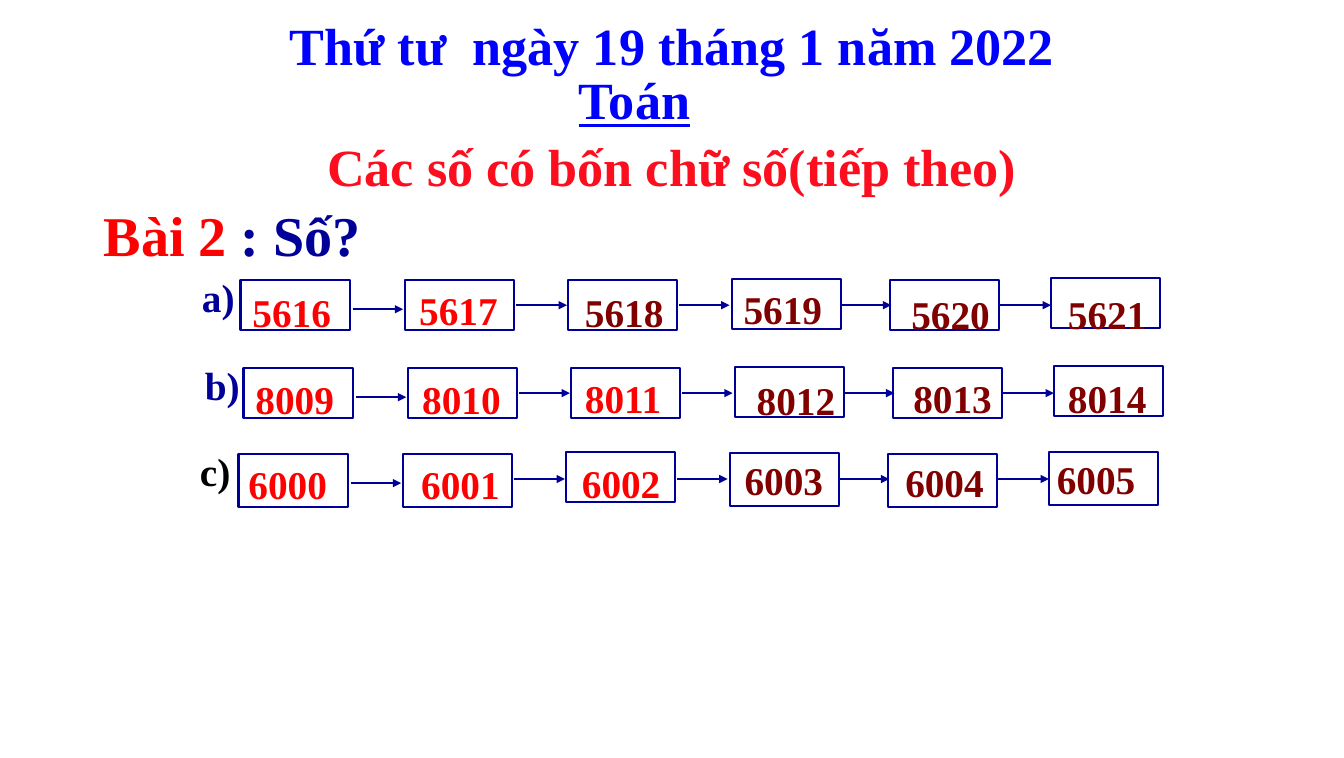
from pptx import Presentation
from pptx.dml.color import RGBColor
from pptx.enum.shapes import MSO_CONNECTOR, MSO_SHAPE
from pptx.enum.text import PP_ALIGN
from pptx.oxml.ns import qn
from pptx.util import Inches, Pt
from lxml.etree import SubElement

FONT = "Times New Roman"
COLORS = {
    "blue": "0000FF", "navy": "000099", "red": "FF0000", "rose": "FC0E1F",
    "maroon": "800000", "black": "000000", "white": "FFFFFF",
}
HEADS = [
    ("Thứ tư  ngày 19 tháng 1 năm 2022", 0.01, 13.3, "blue", False),
    ("Toán", 0.55, 12.56, "blue", True),
    ("Các số có bốn chữ số(tiếp theo)", 1.21, 13.3, "rose", False),
]
TASK = [("Bài 2 ", "red"), (": Số?", "navy")]
BOXES = [2.38, 4.01, 5.62, 7.24, 8.81, 10.4]
ARROWS = [3.49, 5.11, 6.72, 8.32, 9.9]
ROWS = [
    {"label": "a)", "color": "navy", "shift": 0, "top": 2.77, "tall": 0.5,
     "drops": [0, 0, 0, -0.01, 0, -0.02], "given": 2,
     "items": [("5616", 2.4, 2.75), ("5617", 4.05, 2.73), ("5618", 5.69, 2.75),
               ("5619", 7.26, 2.72), ("5620", 8.92, 2.77), ("5621", 10.47, 2.77)]},
    {"label": "b)", "color": "navy", "shift": 0.03, "top": 3.64, "tall": 0.5,
     "drops": [0, 0, 0, -0.01, 0, -0.02], "given": 3,
     "items": [("8009", 2.43, 3.61), ("8010", 4.08, 3.61), ("8011", 5.69, 3.6),
               ("8012", 7.39, 3.62), ("8013", 8.94, 3.6), ("8014", 10.47, 3.6)]},
    {"label": "c)", "color": "black", "shift": -0.02, "top": 4.49, "tall": 0.53,
     "drops": [0, 0, -0.02, -0.01, 0, -0.02], "given": 3,
     "items": [("6000", 2.36, 4.45), ("6001", 4.07, 4.45), ("6002", 5.66, 4.44),
               ("6003", 7.27, 4.41), ("6004", 8.86, 4.43), ("6005", 10.36, 4.4)]},
]


def paint(name):
    return RGBColor.from_string(COLORS[name])


def add_text(slide, spot, parts, size, center=False, under=False):
    frame = slide.shapes.add_textbox(*map(Inches, spot)).text_frame
    frame.word_wrap = True
    frame.margin_top = Inches(0.05) + Pt(size * 0.13)
    frame.margin_bottom = 0
    line = frame.paragraphs[0]
    line.alignment = PP_ALIGN.CENTER if center else PP_ALIGN.LEFT
    for words, color in parts:
        run = line.add_run()
        run.text = words
        run.font.name = FONT
        run.font.size = Pt(size)
        run.font.bold = True
        run.font.underline = under
        run.font.color.rgb = paint(color)


def add_box(slide, left, top, tall):
    box = slide.shapes.add_shape(
        MSO_SHAPE.RECTANGLE, *map(Inches, (left, top, 1.08, tall)))
    box.shadow.inherit = False
    box.fill.solid()
    box.fill.fore_color.rgb = paint("white")
    box.line.color.rgb = paint("navy")
    box.line.width = Pt(1.5)


def add_arrow(slide, left, top):
    arrow = slide.shapes.add_connector(
        MSO_CONNECTOR.STRAIGHT, *map(Inches, (left, top, left + 0.5, top)))
    arrow.line.color.rgb = paint("navy")
    arrow.line.width = Pt(1.5)
    props = arrow.element.spPr
    SubElement(props.find(qn("a:ln")), qn("a:tailEnd"), type="triangle")
    SubElement(props, qn("a:effectLst"))


def add_row(slide, row):
    shift, top = row["shift"], row["top"]
    for index, (left, drop) in enumerate(zip(BOXES, row["drops"])):
        tall = 0.5 if index == 2 else row["tall"]
        add_box(slide, left + shift, top + drop, tall)
    add_text(slide, (1.9 + shift, top - 0.17, 0.67, 0.57),
             [(row["label"], row["color"])], 28)
    for index, left in enumerate(ARROWS):
        add_arrow(slide, left + shift, top + (0.25 if index else 0.29))
    for index, (words, left, high) in enumerate(row["items"]):
        color = "red" if index < row["given"] else "maroon"
        add_text(slide, (left, high, 1.05, 0.57), [(words, color)], 28)


def main():
    deck = Presentation()
    deck.slide_width = Inches(13.3)
    deck.slide_height = Inches(7.5)
    slide = deck.slides.add_slide(deck.slide_layouts[6])
    for words, top, wide, color, under in HEADS:
        add_text(slide, (0, top, wide, 0.73), [(words, color)], 37.2, True, under)
    add_text(slide, (0.93, 1.86, 3.8, 0.77), TASK, 40)
    for row in ROWS:
        add_row(slide, row)
    deck.save("out.pptx")


if __name__ == "__main__":
    main()
